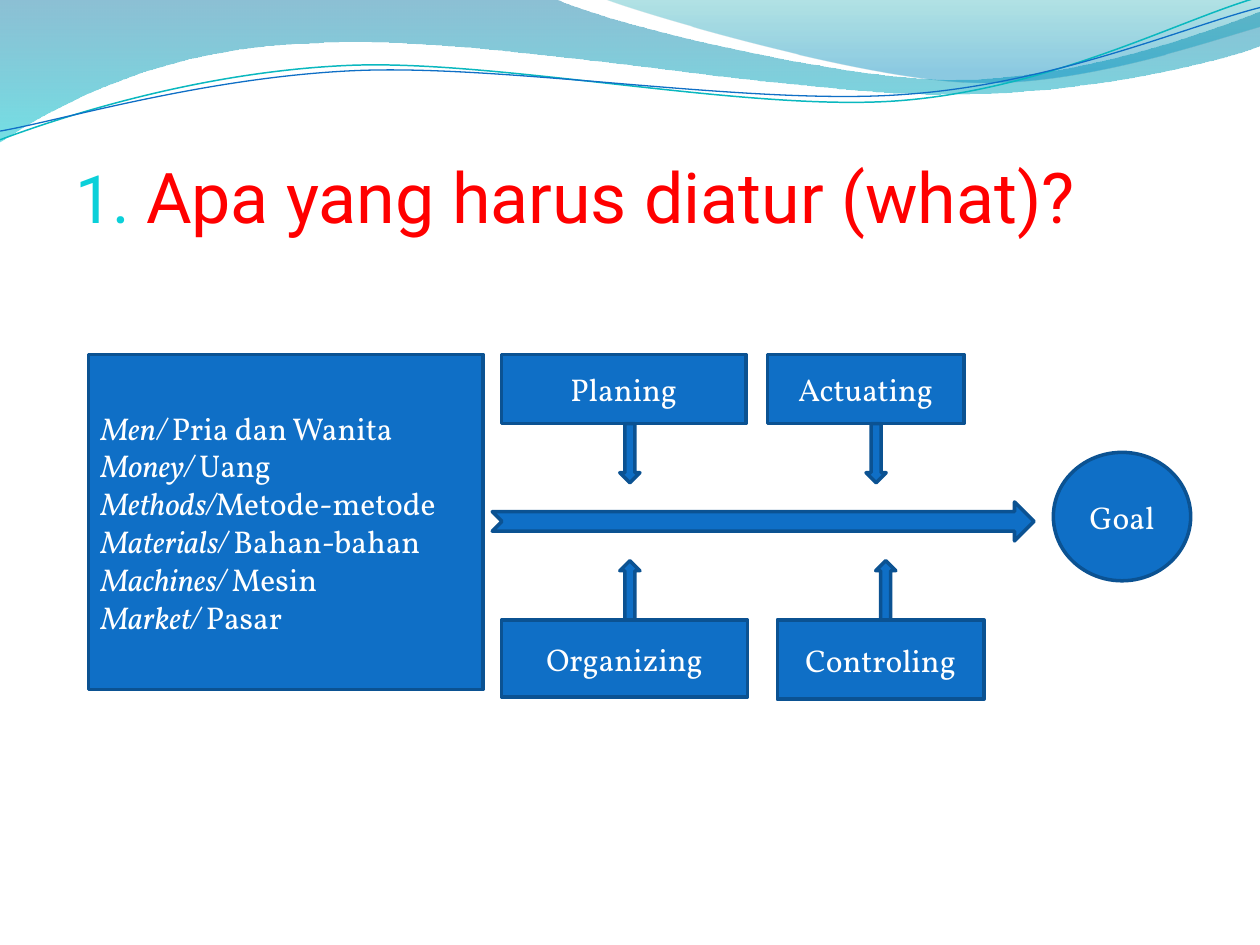
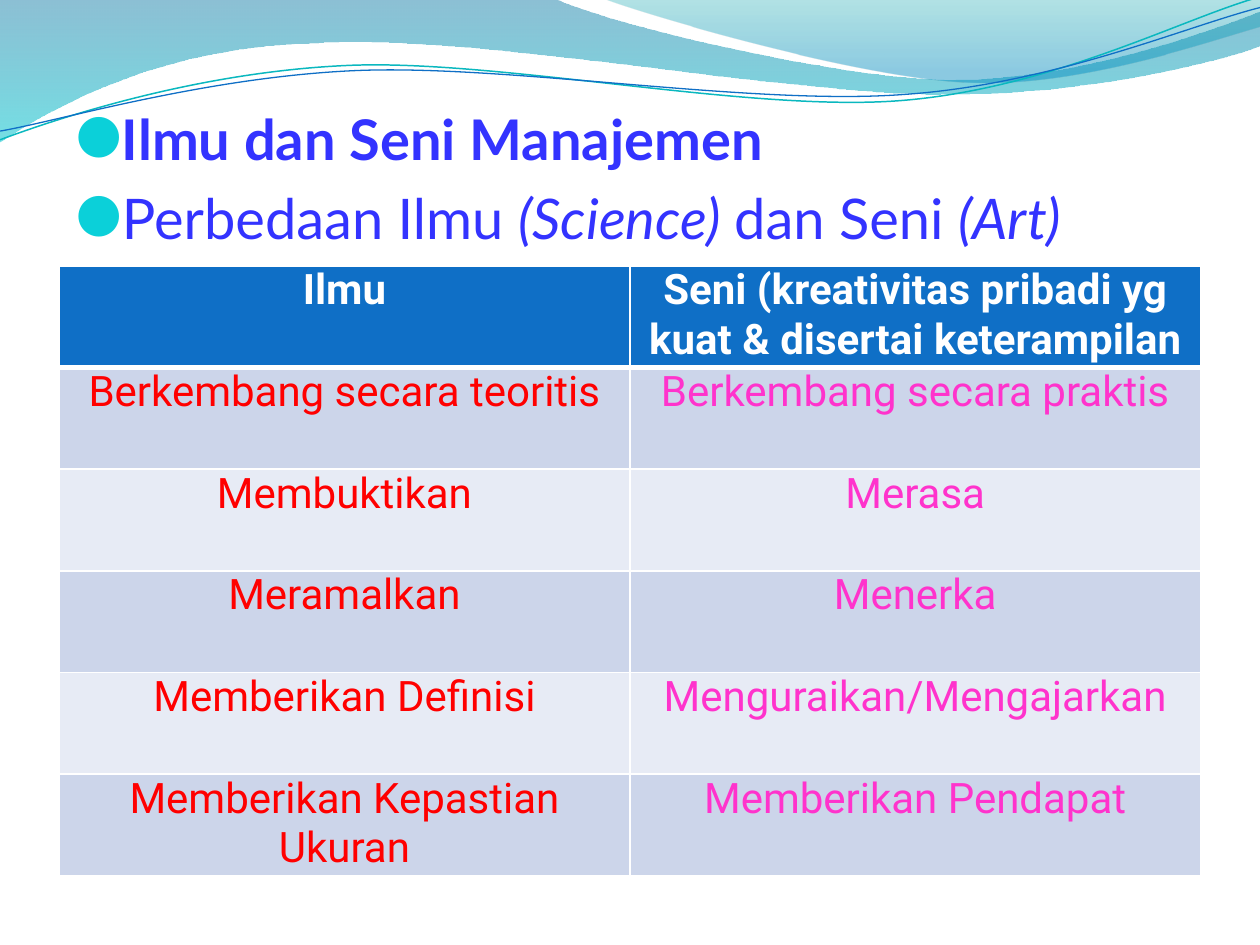
"""Build two slides on what management arranges, and on science and art."""
from lxml import etree
from pptx import Presentation
from pptx.dml import color as dml
from pptx.enum import shapes as kinds, text as txt
from pptx.oxml import ns
from pptx.util import Pt

HUES = {
    "blue": "0F6FC6", "edge": "0B5292", "white": "FFFFFF", "red": "FF0000",
    "pink": "FF33CC", "violet": "3333FF", "cyan": "0BD0D9", "teal": "0AB8BF",
    "odd": "CCD5EA", "even": "E7EBF5", "deep": "0074A1", "aqua": "00C6CF",
    "sea": "00A1A9", "sky": "008BBF",
}

BANDS = [
    (((0, 0), (317, -0.7), (342.7, 12.2, 478.1, 45.4, 545.8, 45.4),
      (614.2, 45.4, 689.8, 18.7, 720, 6.5), (720.7, 26),
      (707.8, 31.7, 626.4, 54.7, 537.1, 54),
      (447.8, 54, 275, 20.2, 185, 24.5), (92.9, 25.9, 33.1, 59.8, -0.7, 81.4)),
     ((0, "deep", 45), (1, "aqua", 55))),
    (((345, -0.7), (366.5, 7.9, 491, 44.6, 553.7, 46.8),
      (616.3, 49.7, 691.9, 23, 720, 15.1), (720, 0)),
     ((0, "sea", 30), (0.8, "sky", 45))),
]
CURVES = [
    (((0, 79.9), (34.6, 67, 113.8, 41, 199.4, 37.4),
      (284.4, 33.8, 427, 64.1, 513.4, 57.6),
      (599.8, 51.1, 675.4, 10.8, 718.6, -1.4)), "teal", 0.85),
    (((0, 74.9), (33.8, 69.1, 118.1, 43.9, 203.8, 40.3),
      (290.2, 36.7, 429.8, 60.5, 516.2, 54),
      (601.9, 48.2, 677.5, 15.1, 720, 4.3)), "blue", 0.75),
]

ASK = "Apa yang harus diatur (what)?"
INPUTS = [("Men/ ", "Pria dan Wanita"), ("Money/ ", "Uang"),
          ("Methods/", "Metode-metode"), ("Materials/ ", "Bahan-bahan"),
          ("Machines/ ", "Mesin"), ("Market/ ", "Pasar")]
STEPS = [("Planing", 286.6, 139.7, 39.6, 354.2, True),
         ("Actuating", 438.5, 112.3, 39.6, 494.9, True),
         ("Organizing", 286.6, 140.6, 44.2, 354.2, False),
         ("Controling", 444.2, 118.1, 45.4, 500.4, False)]
TOP, LOW, STEM, SHAFT = 202.5, 354.2, 33.8, 11.5

HEAD = "Ilmu dan Seni Manajemen"
POINT = [("Perbedaan Ilmu ", False), ("(Science) ", True),
         ("dan Seni ", False), ("(Art)", True)]
ROWS = [
    ("Ilmu", "Seni (kreativitas pribadi yg kuat & disertai keterampilan"),
    ("Berkembang secara teoritis", "Berkembang secara praktis"),
    ("Membuktikan", "Merasa"),
    ("Meramalkan", "Menerka"),
    ("Memberikan Definisi", "Menguraikan/Mengajarkan"),
    ("Memberikan Kepastian Ukuran", "Memberikan Pendapat"),
]
WIDE, HIGH = 326.15, 58.1


def rgb(name):
    return dml.RGBColor.from_string(HUES[name])


def add(node, tag, **attrs):
    return etree.SubElement(node, ns.qn(tag), attrs)


def write(para, words, font, size, hue, bold=False, slant=False):
    run = para.add_run()
    run.text = words
    face = run.font
    face.name, face.size, face.bold, face.italic = font, Pt(size), bold, slant
    face.color.rgb = rgb(hue)


def outline(slide, parts, close):
    spots = [(Pt(part[i]), Pt(part[i + 1]))
             for part in parts for i in range(0, len(part), 2)]
    pen = slide.shapes.build_freeform(*spots[0])
    pen.add_line_segments(spots[1:], close=close)
    wave = pen.convert_to_shape()
    wave.shadow.inherit = False
    steps = wave.element.iter(ns.qn("a:lnTo"))
    steps = iter(list(steps))
    for part in parts[1:]:
        step = next(steps)
        if len(part) == 6:
            step.tag = ns.qn("a:cubicBezTo")
            for _ in range(2):
                spare = next(steps)
                step.append(spare[0])
                spare.getparent().remove(spare)
    return wave


def add_waves(deck, slide):
    waves = []
    for parts, stops in BANDS:
        wave = outline(slide, parts, True)
        wave.line.fill.background()
        wave.fill.gradient()
        wave.fill.gradient_angle = 270
        for stop, (place, hue, alpha) in zip(wave.fill.gradient_stops, stops):
            stop.position = place
            stop.color.rgb = rgb(hue)
        tints = wave.element.iter(ns.qn("a:srgbClr"))
        for tint, (place, hue, alpha) in zip(tints, stops):
            add(tint, "a:alpha", val=str(alpha * 1000))
        waves.append(wave)
    for parts, hue, width in CURVES:
        wave = outline(slide, parts, False)
        wave.fill.background()
        wave.line.color.rgb = rgb(hue)
        wave.line.width = Pt(width)
        waves.append(wave)
    tree = deck.slide_master.element.cSld.spTree
    for i, wave in enumerate(waves):
        tree.insert(2 + i, wave.element)


def add_body(slide, top, high, inset):
    title = slide.shapes.title.element
    title.getparent().remove(title)
    body = slide.placeholders[1]
    body.left, body.top = Pt(36), Pt(top)
    body.width, body.height = Pt(648), Pt(high)
    frame = body.text_frame
    frame.auto_size = txt.MSO_AUTO_SIZE.NONE
    frame.vertical_anchor = txt.MSO_ANCHOR.TOP
    frame.word_wrap = True
    frame.margin_top = Pt(inset)
    return frame


def set_mark(para, gap, indent, font, mark=None):
    para.space_before = Pt(gap)
    props = para._p.get_or_add_pPr()
    props.set("marL", str(Pt(indent)))
    props.set("indent", str(-Pt(indent)))
    add(add(props, "a:buClr"), "a:srgbClr", val=HUES["cyan"])
    add(props, "a:buSzPct", val="95000")
    add(props, "a:buFont", typeface=font)
    if mark:
        add(props, "a:buChar", char=mark)
    else:
        add(props, "a:buAutoNum", type="arabicPeriod")


def add_block(slide, kind, left, top, wide, high, lines=(), align="CENTER"):
    block = slide.shapes.add_shape(getattr(kinds.MSO_SHAPE, kind),
                                   Pt(left), Pt(top), Pt(wide), Pt(high))
    block.shadow.inherit = False
    block.fill.solid()
    block.fill.fore_color.rgb = rgb("blue")
    block.line.color.rgb = rgb("edge")
    block.line.width = Pt(2)
    frame = block.text_frame
    frame.word_wrap = True
    frame.vertical_anchor = txt.MSO_ANCHOR.MIDDLE
    for i, (slant, plain) in enumerate(lines):
        para = frame.add_paragraph() if i else frame.paragraphs[0]
        para.alignment = getattr(txt.PP_ALIGN, align)
        if slant:
            write(para, slant, "Vollkorn", 18, "white", slant=True)
        write(para, plain, "Vollkorn", 18, "white")


def add_flow(slide):
    para = add_body(slide, 28.1, 470.2, 59.7).paragraphs[0]
    set_mark(para, 0, 40.3, "Roboto")
    write(para, ASK, "Roboto", 40, "red")
    add_block(slide, "RECTANGLE", 50.6, TOP, 225.4, 191.5, INPUTS, "LEFT")
    add_block(slide, "NOTCHED_RIGHT_ARROW", 281.3, 286.8, 309.6, 22.3)
    for name, left, wide, high, stem, down in STEPS:
        top = TOP if down else LOW
        add_block(slide, "RECTANGLE", left, top, wide, high, [("", name)])
        add_block(slide, "DOWN_ARROW" if down else "UP_ARROW", stem,
                  top + high if down else top - STEM, SHAFT, STEM)
    add_block(slide, "FLOWCHART_CONNECTOR", 601.9, 258.5, 78.5, 73.4,
              [("", "Goal")])


def set_cell(cell, words, row, col):
    cell.margin_left = cell.margin_right = Pt(5)
    cell.margin_top = cell.margin_bottom = 0
    cell.fill.solid()
    fill = "blue" if row == 0 else "odd" if row % 2 else "even"
    cell.fill.fore_color.rgb = rgb(fill)
    props = cell._tc.get_or_add_tcPr()
    for i, side in enumerate("LRTB"):
        thick = (row, side) in ((0, "B"), (1, "T"))
        rule = add(props, "a:ln" + side, w=str(Pt(3 if thick else 1)))
        add(add(rule, "a:solidFill"), "a:srgbClr", val=HUES["white"])
        props.insert(i, rule)
    para = cell.text_frame.paragraphs[0]
    para.alignment = txt.PP_ALIGN.CENTER
    hue = ("red", "pink")[col] if row else "white"
    write(para, words, "Roboto", 24, hue, bold=row == 0)


def add_pair(slide):
    frame = add_body(slide, 56.2, 442.1, 3.6)
    head, point = frame.paragraphs[0], frame.add_paragraph()
    for para, gap in ((head, 0), (point, 6.4)):
        set_mark(para, gap, 21.6, "Vollkorn", "●")
    write(head, HEAD, "Lato", 32, "violet", bold=True)
    for words, slant in POINT:
        write(point, words, "Lato", 32, "violet", slant=slant)
    grid = slide.shapes.add_table(len(ROWS), 2, Pt(33.8), Pt(151.9),
                                  Pt(2 * WIDE), Pt(len(ROWS) * HIGH)).table
    grid.horz_banding = False
    for col in grid.columns:
        col.width = Pt(WIDE)
    for r, pair in enumerate(ROWS):
        grid.rows[r].height = Pt(HIGH)
        for c, words in enumerate(pair):
            set_cell(grid.cell(r, c), words, r, c)


def main():
    deck = Presentation()
    deck.slide_width, deck.slide_height = Pt(720), Pt(540)
    flow, pair = (deck.slides.add_slide(deck.slide_layouts[1])
                  for _ in range(2))
    add_waves(deck, flow)
    add_flow(flow)
    add_pair(pair)
    deck.save("out.pptx")


if __name__ == "__main__":
    main()
